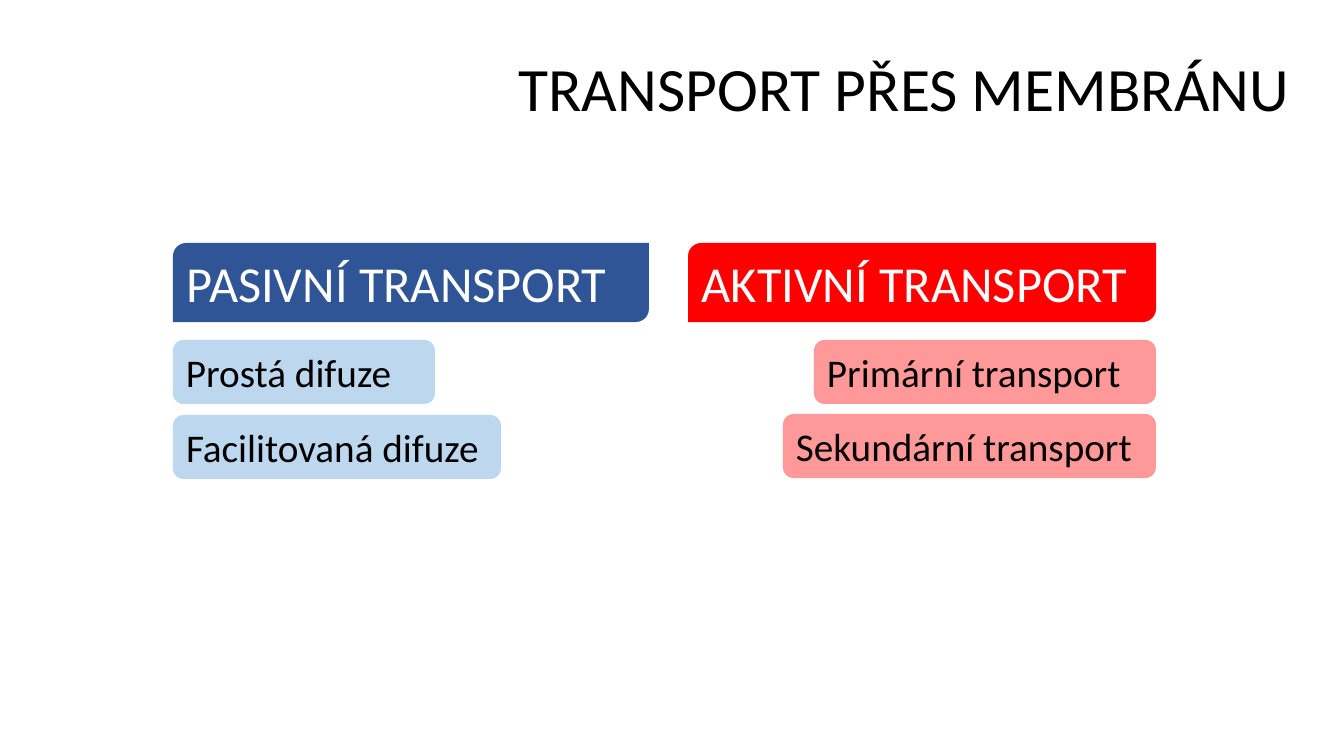
"""Build a slide that sorts membrane transport into passive and active kinds."""
from pptx import Presentation
from pptx.dml.color import RGBColor
from pptx.enum.shapes import MSO_SHAPE
from pptx.enum.text import MSO_ANCHOR, MSO_AUTO_SIZE, PP_ALIGN
from pptx.util import Pt

THEME = {
    "font": "Calibri",
    "title_size": 44,
    "heading_size": 36,
    "item_size": 28,
    "dark": "000000",
    "light": "FFFFFF",
    "passive": "2F5597",
    "passive_item": "BDD7EE",
    "active": "FF0000",
    "active_item": "FF9999",
}
SCALE = 914400 / 100.8


def px(length):
    return round(length * SCALE)


def write(shape, text, size, color, align, anchor):
    frame = shape.text_frame
    frame.word_wrap = True
    frame.vertical_anchor = anchor
    para = frame.paragraphs[0]
    para.text = text
    para.alignment = align
    para.font.name = THEME["font"]
    para.font.size = Pt(THEME[size])
    para.font.color.rgb = RGBColor.from_string(THEME[color])
    return para


deck = Presentation()
deck.slide_width = px(1344)
deck.slide_height = px(756)
page = deck.slides.add_slide(deck.slide_layouts[6])

title = page.shapes.add_textbox(px(141), px(19), px(1159), px(146))
title_para = write(title, "TRANSPORT PŘES MEMBRÁNU", "title_size", "dark",
                   PP_ALIGN.RIGHT, MSO_ANCHOR.MIDDLE)
title_para.line_spacing = 0.9

HEADING = (MSO_SHAPE.ROUND_2_DIAG_RECTANGLE, 79, "heading_size", "light")
ITEM = (MSO_SHAPE.ROUNDED_RECTANGLE, 64, "item_size", "dark")
boxes = [
    (HEADING, "PASIVNÍ TRANSPORT", "passive", 173, 243, 476),
    (ITEM, "Prostá difuze", "passive_item", 173, 340, 262),
    (ITEM, "Facilitovaná difuze", "passive_item", 173, 415, 328),
    (HEADING, "AKTIVNÍ TRANSPORT", "active", 688, 243, 468),
    (ITEM, "Primární transport", "active_item", 814, 340, 342),
    (ITEM, "Sekundární transport", "active_item", 783, 414, 373),
]
for (outline, height, size, color), text, fill, left, top, width in boxes:
    box = page.shapes.add_shape(outline, px(left), px(top), px(width), px(height))
    box.shadow.inherit = False
    box.fill.solid()
    box.fill.fore_color.rgb = RGBColor.from_string(THEME[fill])
    box.line.fill.background()
    write(box, text, size, color, PP_ALIGN.LEFT, MSO_ANCHOR.TOP)
    box.text_frame.auto_size = MSO_AUTO_SIZE.SHAPE_TO_FIT_TEXT

deck.save("out.pptx")
